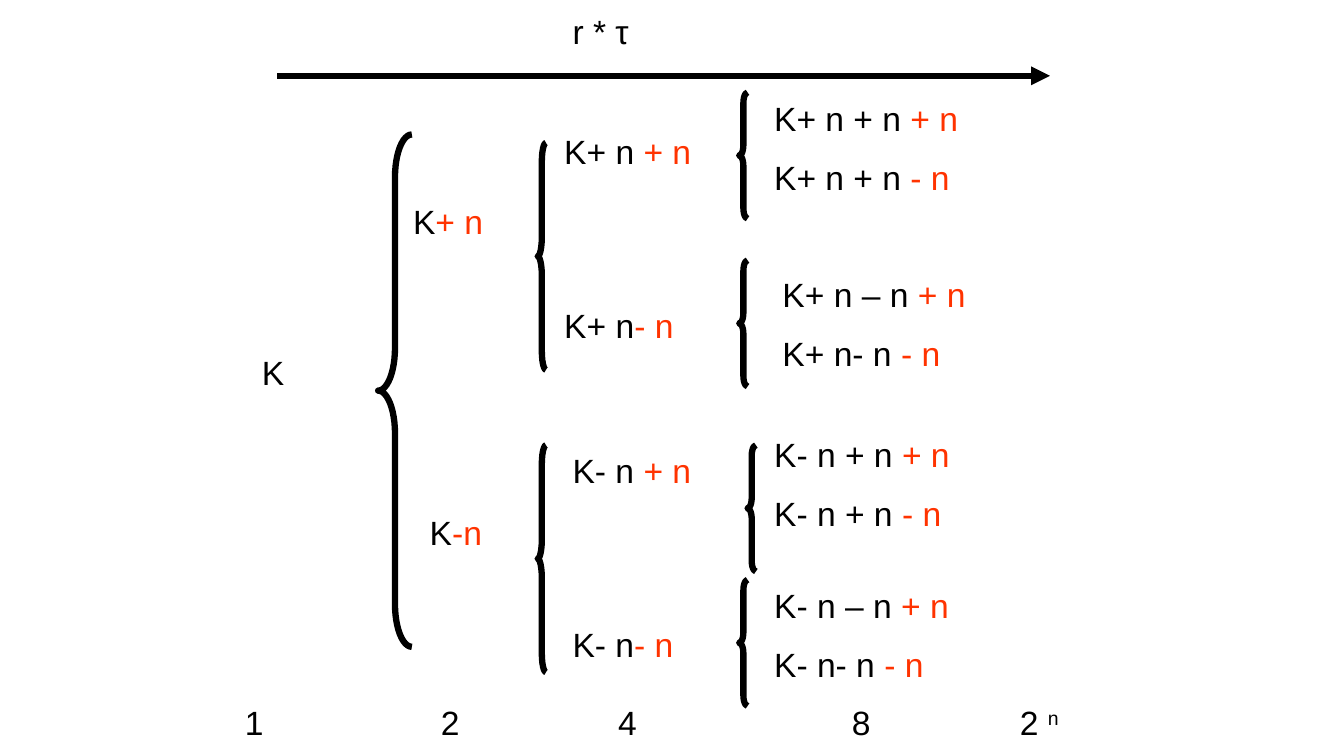
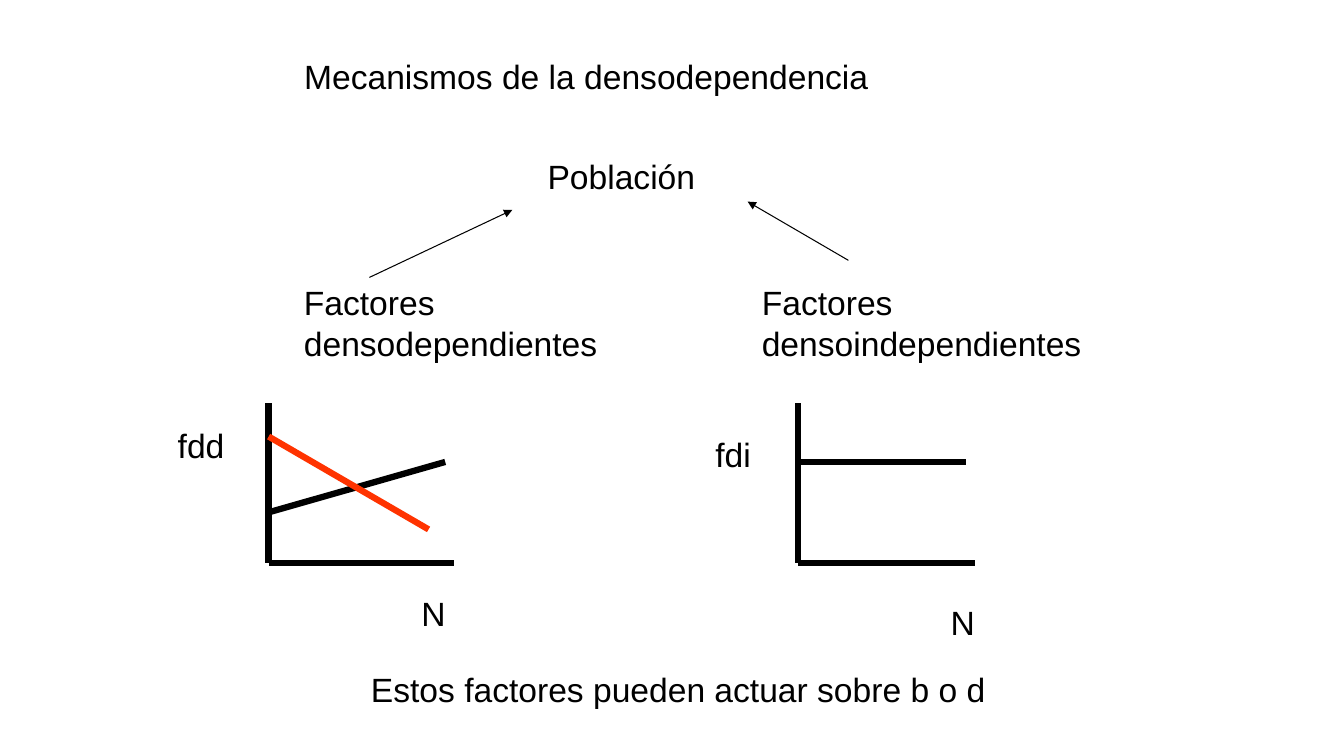
from dataclasses import dataclass

from lxml.etree import SubElement
from pptx import Presentation
from pptx.dml.color import RGBColor
from pptx.enum.shapes import MSO_CONNECTOR, MSO_SHAPE
from pptx.enum.text import MSO_ANCHOR, MSO_AUTO_SIZE, PP_ALIGN
from pptx.oxml.ns import qn
from pptx.util import Cm, Pt


@dataclass(frozen=True)
class Theme:
    """Colours, font, type size, spacing and line widths of the deck."""

    ink: RGBColor = RGBColor(0x00, 0x00, 0x00)
    accent: RGBColor = RGBColor(0xFF, 0x33, 0x00)
    paper: RGBColor = RGBColor(0xFF, 0xFF, 0xFF)
    font: str = "Arial"
    size: Pt = Pt(24)
    gap: float = 13.8
    thick: Pt = Pt(4.5)
    thin: Pt = Pt(0.75)


class Deck:
    """Holds the theme and the slide being drawn."""

    TITLE_ONLY, BLANK = 5, 6

    def __init__(self, theme):
        """Start a widescreen presentation."""
        self.theme = theme
        self.prs = Presentation()
        self.prs.slide_width, self.prs.slide_height = Cm(33.87), Cm(19.05)
        self.slide = None

    def new_slide(self, layout):
        """Add a slide and make it current."""
        self.slide = self.prs.slides.add_slide(self.prs.slide_layouts[layout])

    def style_run(self, run, color):
        """Give a run the deck's font and a colour."""
        run.font.name = self.theme.font
        run.font.size = self.theme.size
        run.font.color.rgb = color

    def set_lines(self, shape, lines, gap):
        """Set lines of plain text, each with an optional accented ending."""
        frame = shape.text_frame
        frame.word_wrap = True
        frame.auto_size = MSO_AUTO_SIZE.NONE
        frame.vertical_anchor = MSO_ANCHOR.TOP
        for index, (plain, accented) in enumerate(lines):
            paragraph = frame.add_paragraph() if index else frame.paragraphs[0]
            paragraph.alignment = PP_ALIGN.LEFT
            paragraph.space_before = Pt(gap if index else 0)
            paragraph.text = plain
            self.style_run(paragraph.runs[0], self.theme.ink)
            if accented:
                ending = paragraph.add_run()
                ending.text = accented
                self.style_run(ending, self.theme.accent)

    def title(self, text, left, top, width, height):
        """Fill and move the title placeholder."""
        heading = self.slide.shapes.title
        heading.left, heading.top = Cm(left), Cm(top)
        heading.width, heading.height = Cm(width), Cm(height)
        self.set_lines(heading, [(text, "")], 0)

    def text(self, lines, left, top, width, height=1.27, gap=None):
        """Add a text box from a string or a list of (plain, accented) lines."""
        label = self.slide.shapes.add_textbox(Cm(left), Cm(top), Cm(width), Cm(height))
        lines = [(lines, "")] if isinstance(lines, str) else lines
        self.set_lines(label, lines, self.theme.gap if gap is None else gap)
        return label

    def panel(self, text, left, top, width, height):
        """Add a label on a paper-coloured rectangle."""
        panel = self.slide.shapes.add_shape(
            MSO_SHAPE.RECTANGLE, Cm(left), Cm(top), Cm(width), Cm(height))
        panel.shadow.inherit = False
        panel.fill.solid()
        panel.fill.fore_color.rgb = self.theme.paper
        panel.line.fill.background()
        self.set_lines(panel, [(text, "")], 0)

    def brace(self, left, top, height, width=0.21):
        """Add a left brace whose curls take a twelfth of its height."""
        brace = self.slide.shapes.add_shape(
            MSO_SHAPE.LEFT_BRACE, Cm(left), Cm(top), Cm(width), Cm(height))
        brace.adjustments[0] = height / width / 12
        brace.shadow.inherit = False
        brace.fill.background()
        brace.line.color.rgb = self.theme.ink
        brace.line.width = self.theme.thick

    def line(self, start, end, color=None, width=None, arrow=False):
        """Add a straight line, with an arrowhead at its end if asked."""
        line = self.slide.shapes.add_connector(
            MSO_CONNECTOR.STRAIGHT, *map(Cm, start), *map(Cm, end))
        line.line.color.rgb = color or self.theme.ink
        line.line.width = width or self.theme.thick
        properties = line._element.spPr
        if arrow:
            SubElement(properties.find(qn("a:ln")), qn("a:tailEnd"), type="triangle")
        SubElement(properties, qn("a:effectLst"))

    def axes(self, left, width, top=10.16, bottom=14.18):
        """Add the two axes of a sketched graph."""
        self.line((left, top), (left, bottom))
        self.line((left, bottom), (left + width, bottom))


def draw_branching(deck):
    """Draw the tree of population sizes that doubles at each step."""
    deck.new_slide(Deck.BLANK)
    deck.line((6.99, 1.91), (26.46, 1.91), arrow=True)
    deck.panel("r * τ", 14.18, 0.15, 3.18, 1.27)

    deck.text("K", 6.35, 8.74, 1.9)
    deck.brace(9.53, 3.39, 12.91, width=0.85)
    deck.text([("K", "+ n")], 10.16, 4.93, 2.97)
    deck.text([("K", "-n")], 10.58, 12.78, 2.33)

    second_step = [("K+ n ", "K+ n", 13.97, 3.18, 3.6),
                   ("K- n ", "K- n", 14.18, 11.22, 11.22)]
    for growing, shrinking, left, top, brace_top in second_step:
        deck.brace(13.55, brace_top, 5.72)
        deck.text([(growing, "+ n"), (shrinking, "- n")], left, top, 4.45, 5.89, gap=95.3)

    third_step = [("K+ n + n ", "K+ n + n ", 19.26, 2.33, 18.63, 2.33),
                  ("K+ n – n ", "K+ n- n ", 19.47, 6.77, 18.63, 6.56),
                  ("K- n + n ", "K- n + n ", 19.26, 10.8, 18.84, 11.22),
                  ("K- n – n ", "K- n- n ", 19.26, 14.61, 18.63, 14.61)]
    for growing, shrinking, left, top, brace_left, brace_top in third_step:
        deck.brace(brace_left, brace_top, 3.18)
        deck.text([(growing, "+ n"), (shrinking, "- n")], left, top, 6.99, 2.82)

    counts = [("1", 5.92), ("2", 10.86), ("4", 15.33), ("8", 21.22)]
    for count, left in counts:
        deck.text(count, left, 17.57, 1.5)
    power = deck.text([("2 ", "n")], 25.45, 17.57, 2.7)
    exponent = power.text_frame.paragraphs[0].runs[1]
    exponent.font.color.rgb = deck.theme.ink
    exponent.font._element.set("baseline", "30000")


def draw_mechanisms(deck):
    """Draw the factors acting on the population and their graphs."""
    theme = deck.theme
    deck.new_slide(Deck.TITLE_ONLY)
    deck.title("Mecanismos de la densodependencia", 7.41, 1.27, 18.84, 1.27)
    deck.text("Población", 13.55, 3.81, 5.08)
    deck.text("Factores densodependientes", 7.41, 6.99, 8.53, 2.31)
    deck.text("Factores densoindependientes", 18.95, 6.99, 9.53, 2.31)
    deck.line((9.31, 6.99), (12.91, 5.29), width=theme.thin, arrow=True)
    deck.line((21.38, 6.56), (18.84, 5.08), width=theme.thin, arrow=True)

    deck.axes(6.77, 4.66)
    deck.line((6.77, 12.91), (11.22, 11.64))
    deck.line((6.77, 11), (10.8, 13.34), color=theme.accent)
    deck.text("fdd", 4.23, 10.58, 1.9)
    deck.text("N", 10.37, 14.82, 1.7)

    deck.axes(20.11, 4.45)
    deck.line((20.11, 11.64), (24.34, 11.64))
    deck.text("fdi", 17.78, 10.8, 1.9)
    deck.text("N", 23.71, 15.03, 1.27)
    deck.text("Estos factores pueden actuar sobre b o d", 9.1, 16.72, 17.36)


def main():
    """Build both slides and save them."""
    deck = Deck(Theme())
    draw_branching(deck)
    draw_mechanisms(deck)
    deck.prs.save("out.pptx")


if __name__ == "__main__":
    main()
